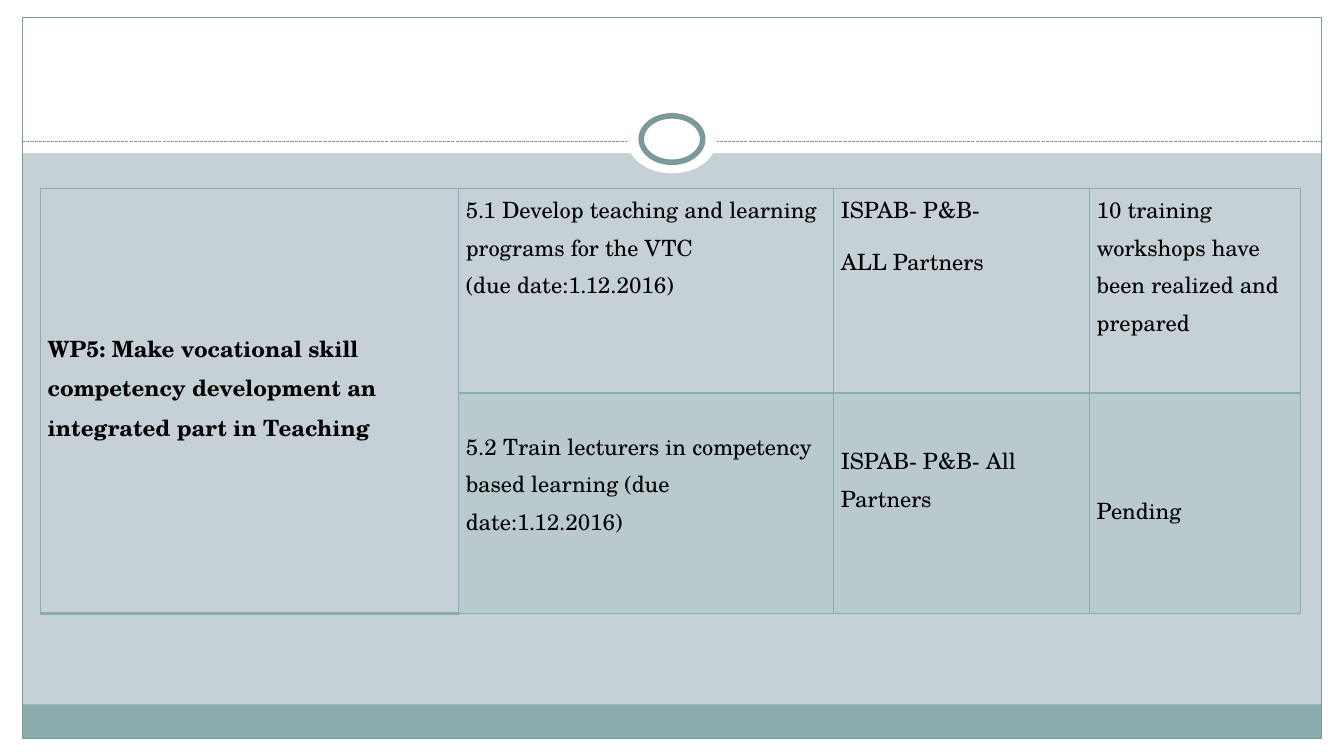
from dataclasses import dataclass

from lxml.etree import SubElement
from pptx import Presentation
from pptx.dml.color import RGBColor
from pptx.enum.dml import MSO_LINE
from pptx.enum.shapes import MSO_CONNECTOR, MSO_SHAPE as Shape
from pptx.enum.text import MSO_ANCHOR as Anchor
from pptx.oxml import parse_xml
from pptx.oxml.ns import nsdecls, qn
from pptx.util import Cm, Pt

# Content: (paragraphs, space above the text in cm) for each cell
WORK_PACKAGE = "WP5: Make vocational skill competency development an integrated part in Teaching"
TASK_ROWS = [
    [
        (["5.1 Develop teaching and learning programs for the VTC", "(due date:1.12.2016)"], 0),
        (["ISPAB- P&B-", "ALL Partners"], 0),
        (["10 training workshops have been realized and prepared"], 0),
    ],
    [
        (["5.2 Train lecturers in competency based learning (due date:1.12.2016)"], 0.81),
        (["ISPAB- P&B- All Partners"], 1.17),
        (["Pending"], 2.44),
    ],
]


@dataclass(frozen=True)
class Theme:
    background: str = "C5D1D7"
    white: str = "FFFFFF"
    accent: str = "8CADAE"
    outline: str = "7C999A"
    text: str = "000000"
    font: str = "TeX Gyre Schola"
    size: int = 16
    thin: float = 0.75
    ring: float = 4
    border: float = 1
    heavy_border: float = 2


THEME = Theme()

# Geometry in cm
WIDTH, HEIGHT = 33.87, 19.05
SIDE, EDGE = 0.56, 0.43
HEADER_HEIGHT, FOOTER_HEIGHT = 3.86, 0.87
RULE_TOP = 3.56
TABLE_LEFT, TABLE_TOP = 1.02, 4.74
COLUMN_WIDTHS = [10.54, 9.45, 6.45, 5.31]
ROW_HEIGHTS = [5.16, 5.56]
CELL_INSET = 0.18
WORK_PACKAGE_LIFT = 0.78


def color(value):
    return RGBColor.from_string(value)


def add_shape(slide, kind, left, top, width, height, fill=None, line_width=None):
    shape = slide.shapes.add_shape(kind, Cm(left), Cm(top), Cm(width), Cm(height))
    shape.shadow.inherit = False
    if fill:
        shape.fill.solid()
        shape.fill.fore_color.rgb = color(fill)
    else:
        shape.fill.background()
    if line_width:
        shape.line.color.rgb = color(THEME.outline)
        shape.line.width = Pt(line_width)
    else:
        shape.line.fill.background()


def add_frame(slide):
    # White margins and header
    for box in [
        (0, HEIGHT - EDGE, WIDTH, EDGE),
        (0, 0, WIDTH, HEADER_HEIGHT),
        (0, 0, SIDE, HEIGHT),
        (WIDTH - SIDE, 0, SIDE, HEIGHT),
    ]:
        add_shape(slide, Shape.RECTANGLE, *box, fill=THEME.white)

    # Footer band and outline
    inner_width = WIDTH - 2 * SIDE
    add_shape(slide, Shape.RECTANGLE, SIDE, HEIGHT - EDGE - FOOTER_HEIGHT,
              inner_width, FOOTER_HEIGHT, fill=THEME.accent)
    add_shape(slide, Shape.RECTANGLE, SIDE, EDGE, inner_width, HEIGHT - 2 * EDGE,
              line_width=THEME.thin)

    # Dashed rule
    rule = slide.shapes.add_connector(
        MSO_CONNECTOR.STRAIGHT, Cm(SIDE), Cm(RULE_TOP), Cm(WIDTH - SIDE), Cm(RULE_TOP))
    rule.line.color.rgb = color(THEME.outline)
    rule.line.width = Pt(THEME.thin)
    rule.line.dash_style = MSO_LINE.SQUARE_DOT
    SubElement(rule._element.spPr, qn("a:effectLst"))

    # Ring on the rule
    for top, width, height, line_width in [(2.67, 2.26, 1.7, None), (2.92, 1.55, 1.17, THEME.ring)]:
        add_shape(slide, Shape.OVAL, (WIDTH - width) / 2, top, width, height,
                  fill=THEME.white, line_width=line_width)


def style_cell(cell, filled, top_width, bottom_width):
    properties = cell._tc.get_or_add_tcPr()
    if filled:
        cell.fill.solid()
        cell.fill.fore_color.rgb = color(THEME.accent)
        SubElement(properties.find(".//" + qn("a:srgbClr")), qn("a:alpha"), val="20000")
    else:
        cell.fill.background()
    widths = {"lnL": THEME.border, "lnR": THEME.border, "lnT": top_width, "lnB": bottom_width}
    for index, (side, width) in enumerate(widths.items()):
        properties.insert(index, parse_xml(
            f'<a:{side} {nsdecls("a")} w="{Pt(width)}"><a:solidFill>'
            f'<a:srgbClr val="{THEME.accent}"/></a:solidFill></a:{side}>'))


def write_cell(cell, lines, space_above=0, space_below=0, space_after=0, bold=False):
    cell.margin_left = cell.margin_right = Cm(CELL_INSET)
    cell.margin_top, cell.margin_bottom = Cm(space_above), Cm(space_below)
    cell.text = "\n".join(lines)
    for paragraph in cell.text_frame.paragraphs:
        paragraph.line_spacing = 1.15
        paragraph.space_after = Pt(space_after)
        font = paragraph.font
        font.name, font.size, font.bold = THEME.font, Pt(THEME.size), bold
        font.color.rgb = color(THEME.text)


def add_task_table(slide):
    table = slide.shapes.add_table(
        len(ROW_HEIGHTS), len(COLUMN_WIDTHS), Cm(TABLE_LEFT), Cm(TABLE_TOP),
        Cm(sum(COLUMN_WIDTHS)), Cm(sum(ROW_HEIGHTS))).table
    table.first_row = table.horz_banding = False
    for column, width in zip(table.columns, COLUMN_WIDTHS):
        column.width = Cm(width)
    for row, height in zip(table.rows, ROW_HEIGHTS):
        row.height = Cm(height)

    # Work package cell spans both rows
    work_package = table.cell(0, 0)
    work_package.merge(table.cell(1, 0))
    for row in range(len(ROW_HEIGHTS)):
        style_cell(table.cell(row, 0), False, THEME.border, THEME.heavy_border)
    write_cell(work_package, [WORK_PACKAGE], space_below=WORK_PACKAGE_LIFT, bold=True)
    work_package.vertical_anchor = Anchor.MIDDLE

    # Tasks, partners and status, with a heavy line between the rows
    for row, tasks in enumerate(TASK_ROWS):
        top, bottom = ((THEME.heavy_border, THEME.border) if row
                       else (THEME.border, THEME.heavy_border))
        for column, (lines, space_above) in enumerate(tasks, start=1):
            cell = table.cell(row, column)
            style_cell(cell, row == 1, top, bottom)
            write_cell(cell, lines, space_above, space_after=10 if column > 1 else 0)


def main():
    presentation = Presentation()
    presentation.slide_width, presentation.slide_height = Cm(WIDTH), Cm(HEIGHT)
    slide = presentation.slides.add_slide(presentation.slide_layouts[6])
    slide.background.fill.solid()
    slide.background.fill.fore_color.rgb = color(THEME.background)
    add_frame(slide)
    add_task_table(slide)
    presentation.save("out.pptx")


if __name__ == "__main__":
    main()
